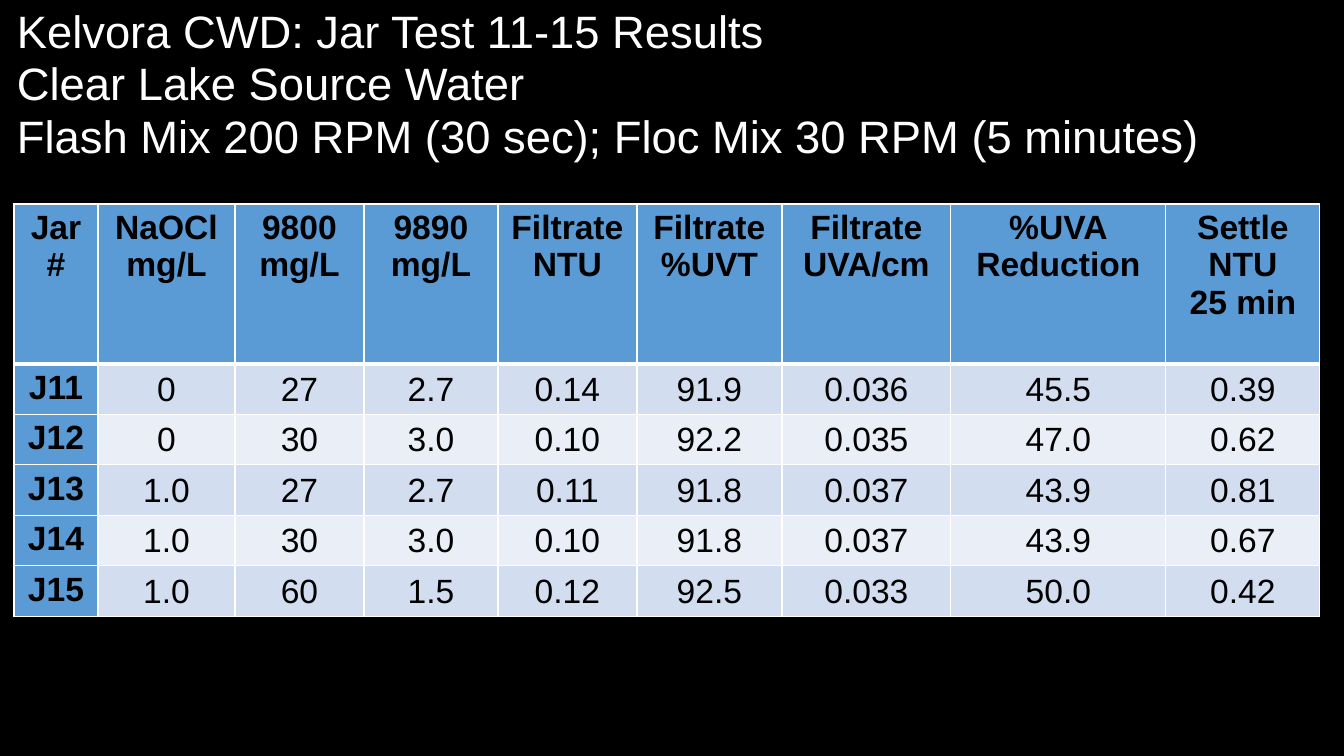
from dataclasses import dataclass

from lxml import etree
from pptx import Presentation
from pptx.dml.color import RGBColor as RGB
from pptx.enum.text import MSO_ANCHOR as Anchor, PP_ALIGN as Align
from pptx.oxml.ns import qn
from pptx.util import Pt

PX = 12192000 // 1344


@dataclass(frozen=True)
class Theme:
    font: str = "Arial"
    background: str = "000000"
    title: str = "FFFFFF"
    text: str = "000000"
    border: str = "FFFFFF"
    heading: str = "5B9BD5"
    bands: tuple = ("D2DEEF", "EAEFF7")
    title_size: float = 32.4
    table_size: int = 24


theme = Theme()


def style_font(font, size, color, bold=False):
    font.name, font.size, font.bold = theme.font, Pt(size), bold
    font.color.rgb = RGB.from_string(color)


def add_borders(cell, **widths):
    """Draw cell edges; widths maps L, R, T and B to points."""
    properties = cell._tc.get_or_add_tcPr()
    for position, (side, points) in enumerate(widths.items()):
        edge = etree.Element(qn(f"a:ln{side}"), w=str(Pt(points)))
        fill = etree.SubElement(edge, qn("a:solidFill"))
        etree.SubElement(fill, qn("a:srgbClr"), val=theme.border)
        properties.insert(position, edge)


title_lines = [
    "Kelvora CWD: Jar Test 11-15 Results",
    "Clear Lake Source Water",
    "Flash Mix 200 RPM (30 sec); Floc Mix 30 RPM (5 minutes)",
]
headings = [
    "Jar\n#", "NaOCl\nmg/L", "9800\nmg/L", "9890\nmg/L", "Filtrate\nNTU",
    "Filtrate\n%UVT", "Filtrate\nUVA/cm", "%UVA\nReduction", "Settle\nNTU\n25 min",
]
jar_results = [
    ["J11", "0", "27", "2.7", "0.14", "91.9", "0.036", "45.5", "0.39"],
    ["J12", "0", "30", "3.0", "0.10", "92.2", "0.035", "47.0", "0.62"],
    ["J13", "1.0", "27", "2.7", "0.11", "91.8", "0.037", "43.9", "0.81"],
    ["J14", "1.0", "30", "3.0", "0.10", "91.8", "0.037", "43.9", "0.67"],
    ["J15", "1.0", "60", "1.5", "0.12", "92.5", "0.033", "50.0", "0.42"],
]
column_widths = [84, 137, 129, 134, 139, 145, 169, 215, 154]
row_heights = [160] + [47] * len(jar_results)

deck = Presentation()
deck.slide_width, deck.slide_height = 1344 * PX, 756 * PX
slide = deck.slides.add_slide(deck.slide_layouts[6])
slide.background.fill.solid()
slide.background.fill.fore_color.rgb = RGB.from_string(theme.background)

title = slide.shapes.add_textbox(7 * PX, 12 * PX, 1313 * PX, 146 * PX).text_frame
title.word_wrap = True
title.vertical_anchor = Anchor.MIDDLE
title_paragraph = title.paragraphs[0]
title_paragraph.text = "\v".join(title_lines)
title_paragraph.line_spacing = 0.97
style_font(title_paragraph.font, theme.title_size, theme.title)

results = slide.shapes.add_table(
    len(row_heights), len(column_widths), 14 * PX, 204 * PX,
    sum(column_widths) * PX, sum(row_heights) * PX,
).table
results.first_row = results.horz_banding = False
for column, width in zip(results.columns, column_widths):
    column.width = width * PX
for row, height in zip(results.rows, row_heights):
    row.height = height * PX

for r, values in enumerate([headings] + jar_results):
    for c, value in enumerate(values):
        cell = results.cell(r, c)
        is_heading = r == 0 or c == 0
        cell.text = value
        for paragraph in cell.text_frame.paragraphs:
            paragraph.alignment = Align.CENTER
            style_font(paragraph.font, theme.table_size, theme.text, is_heading)
        if not is_heading:
            cell.vertical_anchor = Anchor.MIDDLE
            cell.margin_left = cell.margin_right = cell.margin_top = PX
            cell.margin_bottom = 0
        cell.fill.solid()
        cell.fill.fore_color.rgb = RGB.from_string(
            theme.heading if is_heading else theme.bands[(r - 1) % 2])
        add_borders(cell, L=1, R=1, T=3 if r == 1 else 1, B=3 if r == 0 else 1)

deck.save("out.pptx")
